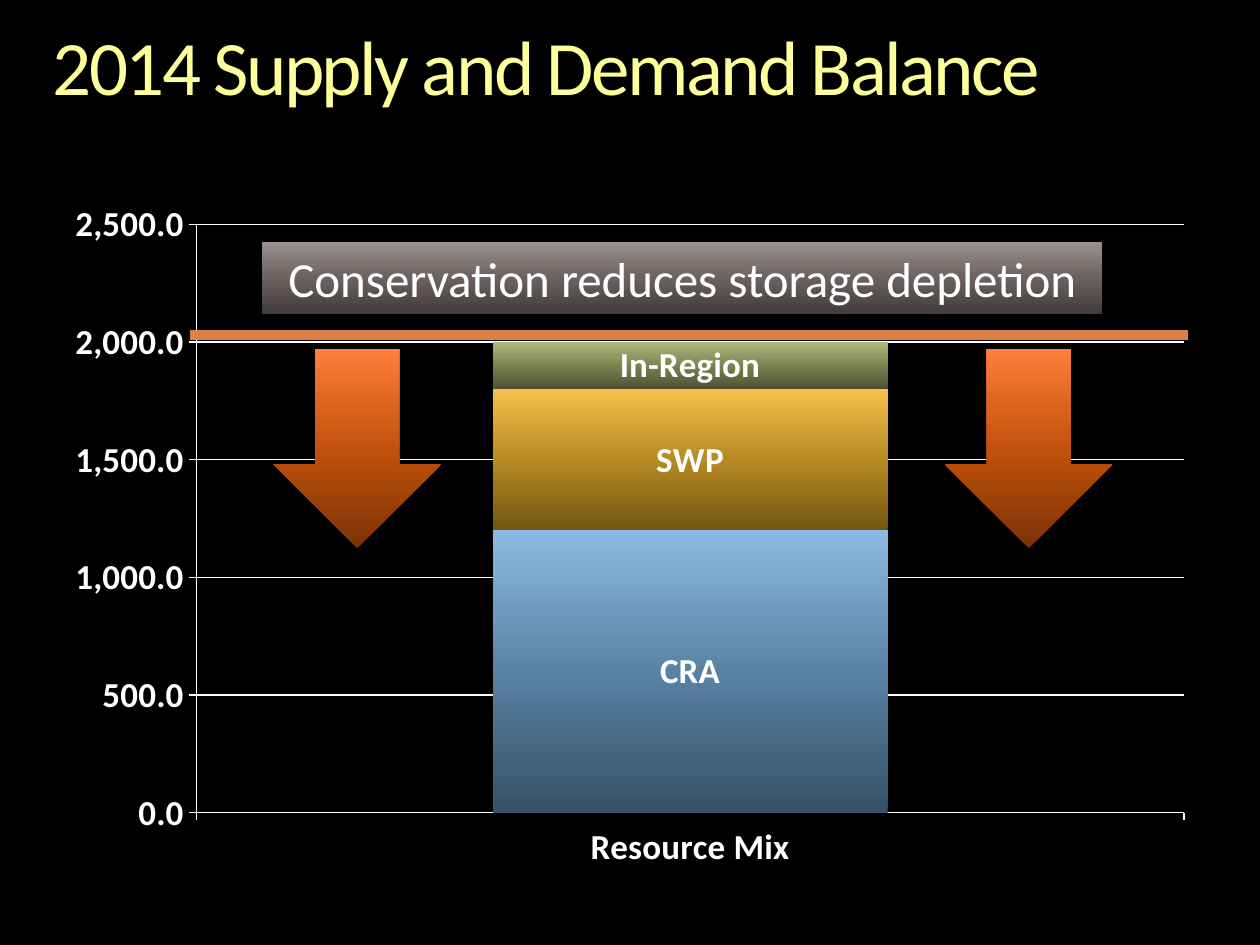
from lxml.etree import SubElement
from pptx import Presentation
from pptx.chart.data import CategoryChartData
from pptx.dml.color import RGBColor
from pptx.enum.chart import XL_CHART_TYPE, XL_LABEL_POSITION, XL_TICK_MARK
from pptx.enum.shapes import MSO_CONNECTOR, MSO_SHAPE
from pptx.enum.text import MSO_ANCHOR, PP_ALIGN
from pptx.oxml import parse_xml
from pptx.oxml.ns import nsdecls, qn
from pptx.util import Inches, Pt

BLACK = RGBColor(0x00, 0x00, 0x00)
WHITE = RGBColor(0xFF, 0xFF, 0xFF)
YELLOW = RGBColor(0xFF, 0xFF, 0x99)
ORANGE = RGBColor(0xDD, 0x80, 0x47)
FONT = "Calibri"

# Gradients run from bottom to top through these stops (percent)
STOPS = (0, 50, 70, 100)
BLUES = ("365167", "5982A4", "6E99BC", "8BBBE4")
GOLDS = ("745613", "B78A22", "CF9F34", "F8C14D")
GREENS = ("4E5231", "7C8351", "919863", "B2BA80")
RUSTS = ("7B3205", "C1520D", "D9631E", "FF7F3C")
GREYS = ("433C3C", "6C6060", "807373", "9F9191")

SUPPLIES = (("CRA", 1200, BLUES), ("SWP", 600, GOLDS), ("In-Region", 200, GREENS))


def set_font(font, size, color=WHITE, bold=False):
    font.name = FONT
    font.size = Pt(size)
    font.bold = bold
    font.color.rgb = color


def set_gradient(fill, sp_pr, colors):
    fill.gradient()
    fill.gradient_angle = 90
    stops = sp_pr.find(qn("a:gradFill")).find(qn("a:gsLst"))
    for stop in list(stops):
        stops.remove(stop)
    for position, color in zip(STOPS, colors):
        stop = SubElement(stops, qn("a:gs"), pos=str(position * 1000))
        SubElement(stop, qn("a:srgbClr"), val=color)


def add_title(s, text):
    tf = s.shapes.add_textbox(Inches(0.42), Inches(0.23), Inches(9.17), Inches(0.67)).text_frame
    tf.word_wrap = True
    tf.margin_left = tf.margin_right = tf.margin_top = tf.margin_bottom = 0
    p = tf.paragraphs[0]
    p.line_spacing = 0.9
    r = p.add_run()
    r.text = text
    set_font(r.font, 44, YELLOW)
    r.font._element.set("spc", "-150")


def add_gradient_shape(s, kind, left, top, width, height, colors):
    sp = s.shapes.add_shape(kind, Inches(left), Inches(top), Inches(width), Inches(height))
    sp.shadow.inherit = False
    sp.line.fill.background()
    set_gradient(sp.fill, sp._element.spPr, colors)
    return sp


def add_banner(s, text):
    sp = add_gradient_shape(s, MSO_SHAPE.RECTANGLE, 2.08, 1.92, 6.67, 0.57, GREYS)
    tf = sp.text_frame
    tf.word_wrap = True
    tf.vertical_anchor = MSO_ANCHOR.MIDDLE
    p = tf.paragraphs[0]
    p.text = text
    p.alignment = PP_ALIGN.CENTER
    set_font(p.font, 28)


def add_demand_line(s):
    line = s.shapes.add_connector(
        MSO_CONNECTOR.STRAIGHT, Inches(1.51), Inches(2.66), Inches(9.43), Inches(2.66))
    line.line.color.rgb = ORANGE
    line.line.width = Pt(6)
    SubElement(line._element.spPr, qn("a:effectLst"))


def style_axis(axis):
    axis.major_tick_mark = XL_TICK_MARK.OUTSIDE
    axis.minor_tick_mark = XL_TICK_MARK.NONE
    set_font(axis.tick_labels.font, 20, bold=True)
    axis.format.line.color.rgb = WHITE
    axis.format.line.width = Pt(0.75)


def place_plot(chart, x, y, w, h):
    plot_area = chart._chartSpace.chart.plotArea
    for layout in plot_area.findall(qn("c:layout")):
        plot_area.remove(layout)
    plot_area.insert(0, parse_xml(
        f'<c:layout {nsdecls("c")}><c:manualLayout><c:layoutTarget val="inner"/>'
        '<c:xMode val="edge"/><c:yMode val="edge"/>'
        f'<c:x val="{x}"/><c:y val="{y}"/><c:w val="{w}"/><c:h val="{h}"/>'
        '</c:manualLayout></c:layout>'))


def add_supply_chart(s):
    data = CategoryChartData(number_format="#,##0.0")
    data.categories = ["Resource Mix"]
    for name, value, _ in SUPPLIES:
        data.add_series(name, [value])
    chart = s.shapes.add_chart(
        XL_CHART_TYPE.COLUMN_STACKED, Inches(0.42), Inches(1.5),
        Inches(9.17), Inches(5.5), data).chart
    chart.has_title = False
    chart.has_legend = False
    set_font(chart.font, 18)
    place_plot(chart, 0.124, 0.051, 0.855, 0.849)

    # Axes
    style_axis(chart.category_axis)
    axis = chart.value_axis
    style_axis(axis)
    axis.minimum_scale, axis.maximum_scale, axis.major_unit = 0, 2500, 500
    axis.tick_labels.number_format = "#,##0.0"
    axis.tick_labels.number_format_is_linked = False
    axis.has_major_gridlines = True
    axis.major_gridlines.format.line.color.rgb = WHITE
    axis.major_gridlines.format.line.width = Pt(0.75)

    # Stacked series, each labelled with its name
    plot = chart.plots[0]
    plot.gap_width = 150
    plot.overlap = 100
    plot.vary_by_categories = False
    for series, (_, _, colors) in zip(plot.series, SUPPLIES):
        set_gradient(series.format.fill, series._element.get_or_add_spPr(), colors)
        labels = series.data_labels
        labels.show_series_name = True
        labels.show_value = False
        labels.position = XL_LABEL_POSITION.CENTER
        set_font(labels.font, 20, bold=True)


def main():
    prs = Presentation()
    prs.slide_width, prs.slide_height = Inches(10), Inches(7.5)
    s = prs.slides.add_slide(prs.slide_layouts[6])
    s.background.fill.solid()
    s.background.fill.fore_color.rgb = BLACK

    add_title(s, "2014 Supply and Demand Balance")
    add_supply_chart(s)
    add_demand_line(s)
    add_banner(s, "Conservation reduces storage depletion")
    for left in (2.17, 7.5):
        add_gradient_shape(s, MSO_SHAPE.DOWN_ARROW, left, 2.77, 1.33, 1.58, RUSTS)

    prs.save("out.pptx")


if __name__ == "__main__":
    main()
